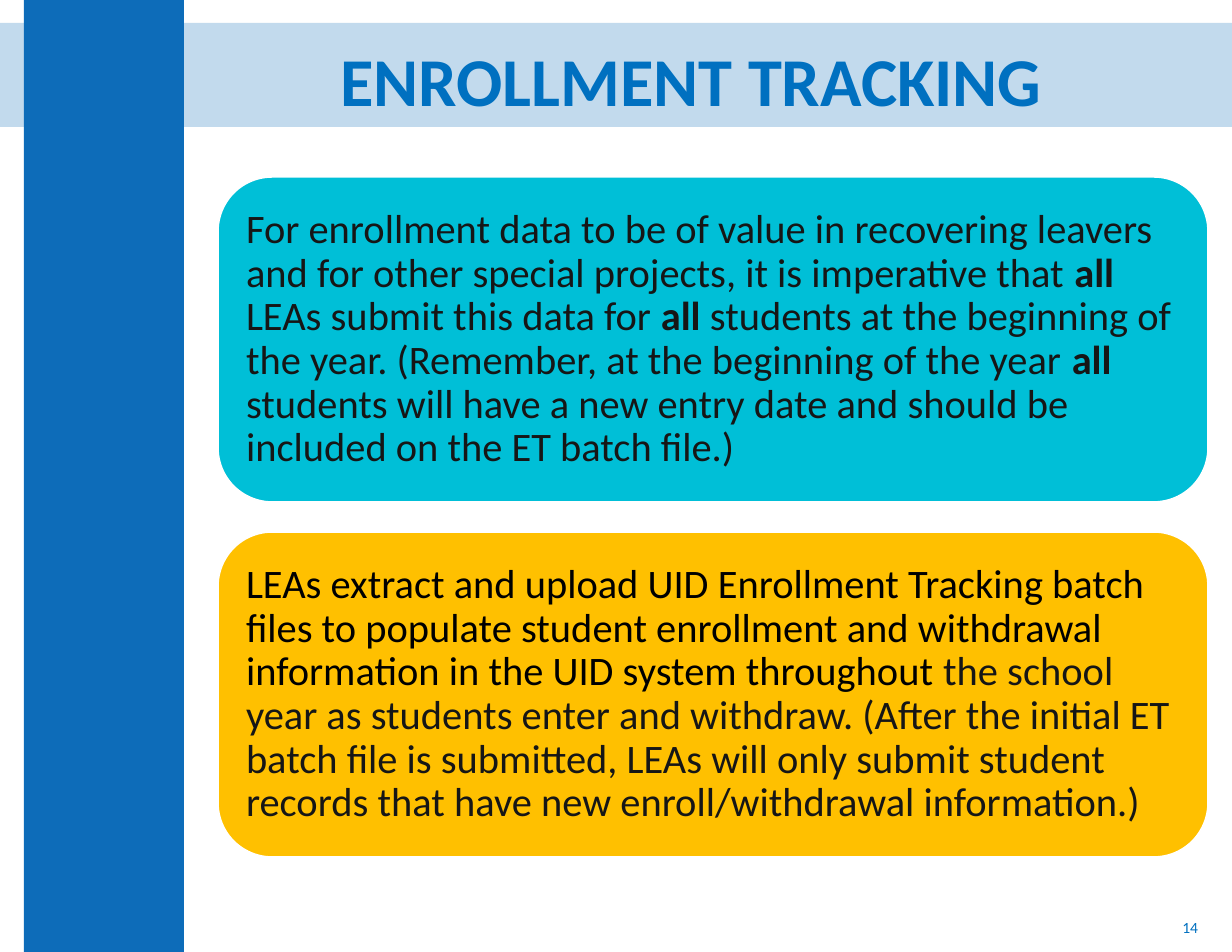
from lxml.etree import SubElement
from pptx import Presentation
from pptx.dml.color import RGBColor
from pptx.enum.shapes import MSO_SHAPE
from pptx.enum.text import MSO_ANCHOR, PP_ALIGN
from pptx.oxml.ns import qn
from pptx.util import Emu, Pt

SCALE = 914400 // 112  # EMU per px
BLUE, TITLE, INK = "0D6CB9", "0070C0", "161616"


def px(n):
    return Emu(n * SCALE)


def color(code):
    return RGBColor.from_string(code)


class Deck:
    font = "Calibri"

    def __init__(self, wide, high):
        self.prs = Presentation()
        self.prs.slide_width, self.prs.slide_height = px(wide), px(high)
        self.slide = self.prs.slides.add_slide(self.prs.slide_layouts[6])

    def shape(self, kind, box, fill, line=None, alpha=None):
        item = self.slide.shapes.add_shape(kind, *map(px, box))
        item.shadow.inherit = False
        item.fill.solid()
        item.fill.fore_color.rgb = color(fill)
        if alpha:
            tone = item.fill._xPr.find(qn("a:solidFill"))[0]
            SubElement(tone, qn("a:alpha"), val=str(alpha * 1000))
        if line:
            item.line.color.rgb = color(line)
            item.line.width = Pt(1)
        else:
            item.line.fill.background()

    def text(self, box, runs, size, align=PP_ALIGN.LEFT, space=1.0, pad=None):
        """Each run is (words, colour, bold)."""
        frame = self.slide.shapes.add_textbox(*map(px, box)).text_frame
        frame.word_wrap = True
        frame.vertical_anchor = MSO_ANCHOR.MIDDLE
        if pad:
            frame.margin_left = frame.margin_right = px(pad)
            frame.margin_top = frame.margin_bottom = px(pad)
        para = frame.paragraphs[0]
        para.alignment = align
        para.line_spacing = space
        for words, tone, bold in runs:
            run = para.add_run()
            run.text = words
            run.font.name = self.font
            run.font.size = Pt(size)
            run.font.bold = bold
            run.font.color.rgb = color(tone)

    def card(self, box, fill, runs):
        left, top, wide, high = box
        gap = 16
        self.shape(MSO_SHAPE.ROUNDED_RECTANGLE, box, fill, "FFFFFF")
        inner = (left + gap, top + gap, wide - 2 * gap, high - 2 * gap)
        self.text(inner, runs, 26, space=0.9, pad=12)


def main():
    deck = Deck(1232, 952)

    # Backdrop: pale band and side bar
    deck.shape(MSO_SHAPE.RECTANGLE, (0, 23, 1232, 104), BLUE, alpha=25)
    deck.shape(MSO_SHAPE.RECTANGLE, (24, 0, 160, 952), BLUE)

    # Page number and title
    deck.text((931, 902, 278, 50), [("14", TITLE, False)], 10, PP_ALIGN.RIGHT)
    deck.text((205, 34, 973, 101), [("ENROLLMENT TRACKING", TITLE, True)],
              44, PP_ALIGN.CENTER, 0.9)

    # Cards
    need = [
        ("For enrollment data to be of value in recovering leavers and for "
         "other special projects, it is imperative that ", INK, False),
        ("all", INK, True),
        (" LEAs submit this data for ", INK, False),
        ("all", INK, True),
        (" students at the beginning of the year. (Remember, at the beginning "
         "of the year ", INK, False),
        ("all", INK, True),
        (" students will have a new entry date and should be included on the "
         "ET batch file.)", INK, False),
    ]
    steps = [
        ("LEAs extract and upload UID Enrollment Tracking batch files to "
         "populate student enrollment and withdrawal information in the UID "
         "system throughout ", "000000", False),
        ("the school year as students enter and withdraw. (After the initial "
         "ET batch file is submitted, LEAs will only submit student records "
         "that have new enroll/withdrawal information.)", INK, False),
    ]
    for i, (fill, runs) in enumerate([("00BFD7", need), ("FFC000", steps)]):
        deck.card((218, 177 + 355 * i, 990, 325), fill, runs)

    deck.prs.save("out.pptx")


if __name__ == "__main__":
    main()
